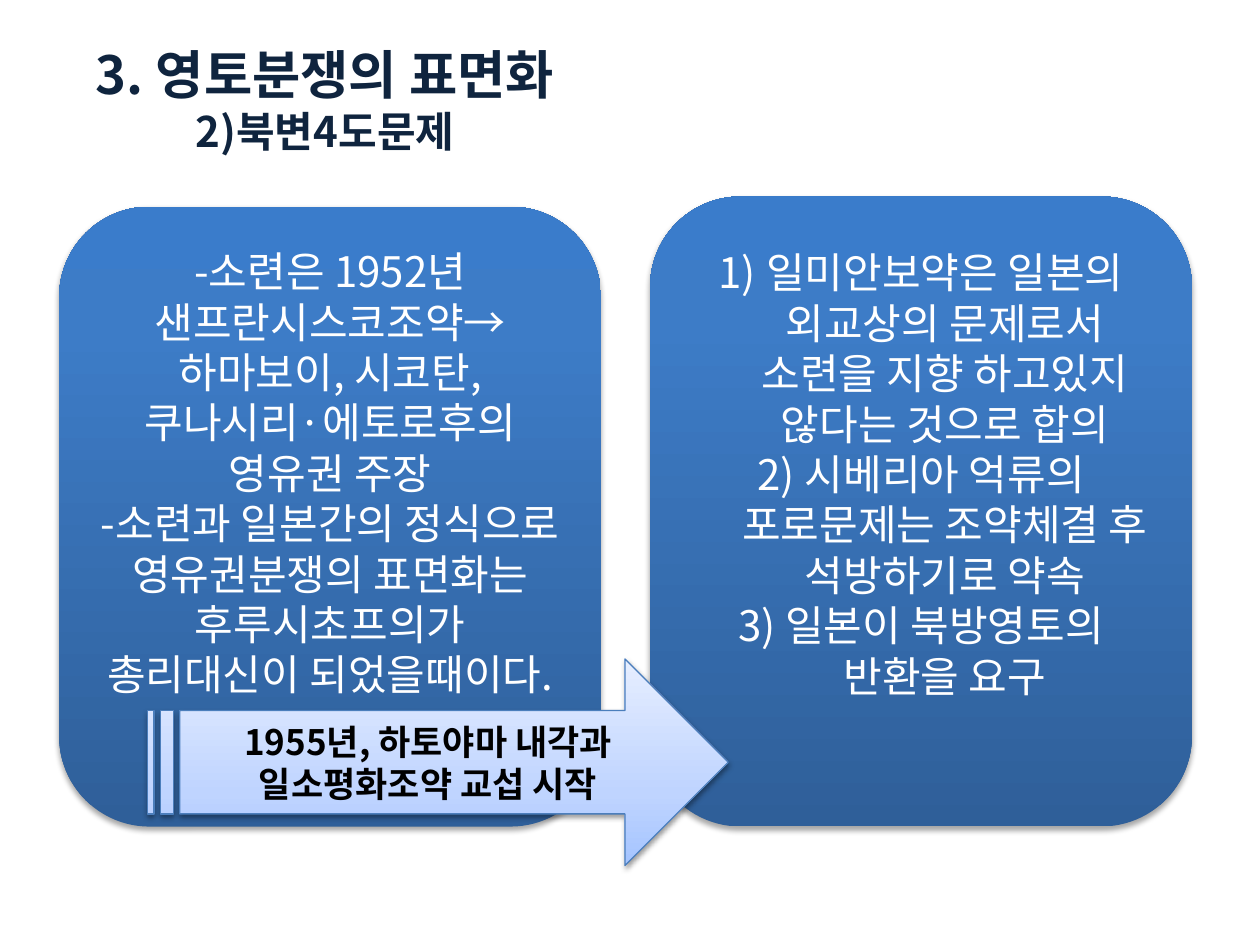
from dataclasses import dataclass

from lxml import etree
from pptx import Presentation
from pptx.dml.color import RGBColor
from pptx.enum.shapes import MSO_SHAPE
from pptx.enum.text import MSO_ANCHOR, MSO_AUTO_SIZE, PP_ALIGN
from pptx.oxml.ns import qn
from pptx.util import Inches, Pt

ROUNDED = MSO_SHAPE.ROUNDED_RECTANGLE
ARROW = MSO_SHAPE.STRIPED_RIGHT_ARROW
MIDDLE = MSO_ANCHOR.MIDDLE
CENTER = PP_ALIGN.CENTER
NO_AUTOFIT = MSO_AUTO_SIZE.NONE
FONT = "Noto Sans CJK KR"
CARD_STOPS = ((0, "2F5F99"), (80, "3D7CC7"), (100, "3A7CCB"))
ARROW_STOPS = ((0, "A4C4FF"), (35, "BFD4FF"), (100, "E6EEFF"))


@dataclass(frozen=True)
class Line:
    text: str
    size: int = 24
    indent: float = 0
    numbered: bool = False


@dataclass(frozen=True)
class Panel:
    kind: int
    left: float
    top: float
    width: float
    height: float
    stops: tuple
    lines: tuple
    color: str = "FFFFFF"
    bold: bool = False
    border: str = ""
    bottom_margin: float = 0.05
    shadow_distance: float = 1.8
    shadow_opacity: int = 35


PANELS = (
    Panel(ROUNDED, 0.47, 1.64, 4.3, 4.92, CARD_STOPS, (
        Line("-소련은 1952년 샌프란시스코조약→하마보이, 시코탄, 쿠나시리·에토로후의 영유권 주장"),
        Line("-소련과 일본간의 정식으로 영유권분쟁의 표면화는 후루시초프의가 총리대신이 되었을때이다."),
    ), bottom_margin=0.75),
    Panel(ROUNDED, 5.16, 1.56, 4.3, 5, CARD_STOPS, (
        Line("일미안보약은 일본의 외교상의 문제로서 소련을 지향 하고있지 않다는 것으로 합의",
             indent=0.38, numbered=True),
        Line("시베리아 억류의 포로문제는 조약체결 후 석방하기로 약속",
             indent=0.38, numbered=True),
        Line("3) 일본이 북방영토의 반환을 요구", indent=0.38),
    ), bottom_margin=0.65),
    Panel(ARROW, 1.17, 5.23, 4.61, 1.64, ARROW_STOPS, (
        Line("1955년, 하토야마 내각과 일소평화조약 교섭 시작", 20),
    ), "000000", True, "4B7EBC", shadow_distance=1.6, shadow_opacity=38),
)
TITLE_LINES = (
    Line("3. 영토분쟁의 표면화", 30, 0.56),
    Line("2)북변4도문제", 24, 0.56),
)


def rgb(value: str) -> RGBColor:
    return RGBColor.from_string(value)


def add_color(parent, value: str):
    return etree.SubElement(parent, qn("a:srgbClr"), val=value)


def write_lines(frame, lines: tuple, color: str, bold: bool) -> None:
    frame.word_wrap = True
    frame.auto_size = NO_AUTOFIT
    frame.vertical_anchor = MIDDLE
    frame.text = "\n".join(line.text for line in lines)
    for para, line in zip(frame.paragraphs, lines):
        para.alignment = CENTER
        properties = para._p.get_or_add_pPr()
        if line.indent:
            properties.set("marL", str(Inches(line.indent)))
            properties.set("indent", str(-Inches(line.indent)))
        if line.numbered:
            etree.SubElement(properties, qn("a:buFont"), typeface=FONT)
            etree.SubElement(properties, qn("a:buAutoNum"), type="arabicParenR")
        for span in para.runs:
            span.font.size = Pt(line.size)
            span.font.bold = bold
            span.font.color.rgb = rgb(color)
            span.font.name = FONT
            etree.SubElement(span._r.get_or_add_rPr(), qn("a:ea"), typeface=FONT)


def fill_gradient(shape, stops: tuple) -> None:
    shape.fill.gradient()
    shape.fill.gradient_angle = 90
    stop_list = shape._element.spPr.find(".//" + qn("a:gsLst"))
    for old_stop in list(stop_list):
        stop_list.remove(old_stop)
    for position, color in stops:
        stop = etree.SubElement(stop_list, qn("a:gs"), pos=str(position * 1000))
        add_color(stop, color)


def add_shadow(shape, distance: float, opacity: int) -> None:
    shape.shadow.inherit = False
    effects = shape._element.spPr.find(qn("a:effectLst"))
    shadow = etree.SubElement(
        effects, qn("a:outerShdw"), blurRad=str(Pt(3.1)), dist=str(Pt(distance)),
        dir="5400000", rotWithShape="0")
    color = add_color(shadow, "000000")
    etree.SubElement(color, qn("a:alpha"), val=str(opacity * 1000))


def add_panel(page, panel: Panel) -> None:
    shape = page.shapes.add_shape(
        panel.kind, Inches(panel.left), Inches(panel.top),
        Inches(panel.width), Inches(panel.height))
    fill_gradient(shape, panel.stops)
    if panel.border:
        shape.line.color.rgb = rgb(panel.border)
        shape.line.width = Pt(0.75)
    else:
        shape.line.fill.background()
    add_shadow(shape, panel.shadow_distance, panel.shadow_opacity)
    shape.text_frame.margin_bottom = Inches(panel.bottom_margin)
    write_lines(shape.text_frame, panel.lines, panel.color, panel.bold)


def main() -> None:
    deck = Presentation()
    deck.slide_width, deck.slide_height = Inches(10), Inches(7.5)
    page = deck.slides.add_slide(deck.slide_layouts[5])
    title = page.shapes.title
    title.left, title.top = Inches(-1.95), Inches(0.16)
    title.width, title.height = Inches(9.06), Inches(1.25)
    write_lines(title.text_frame, TITLE_LINES, "0F243E", True)
    for panel in PANELS:
        add_panel(page, panel)
    deck.save("out.pptx")


if __name__ == "__main__":
    main()
